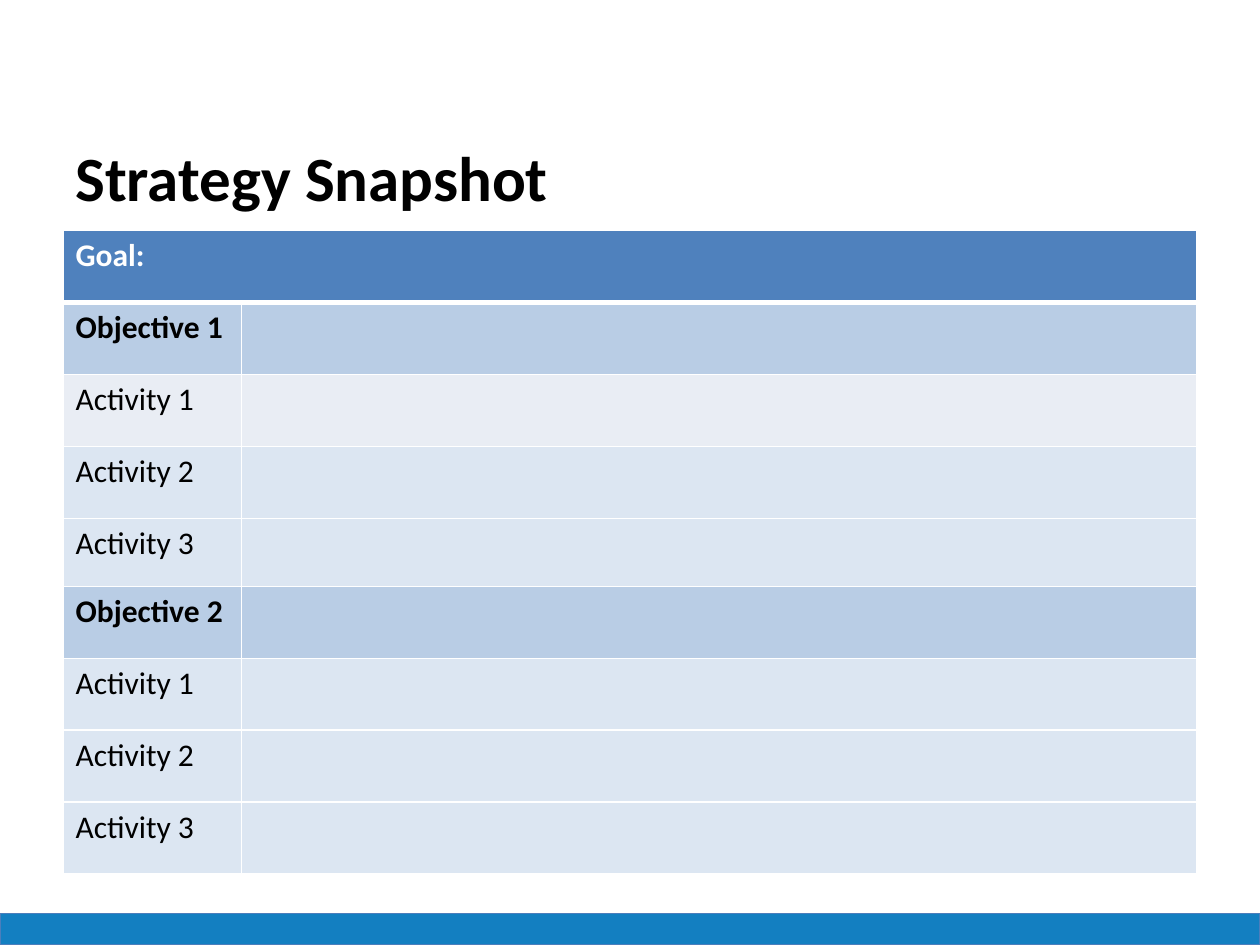
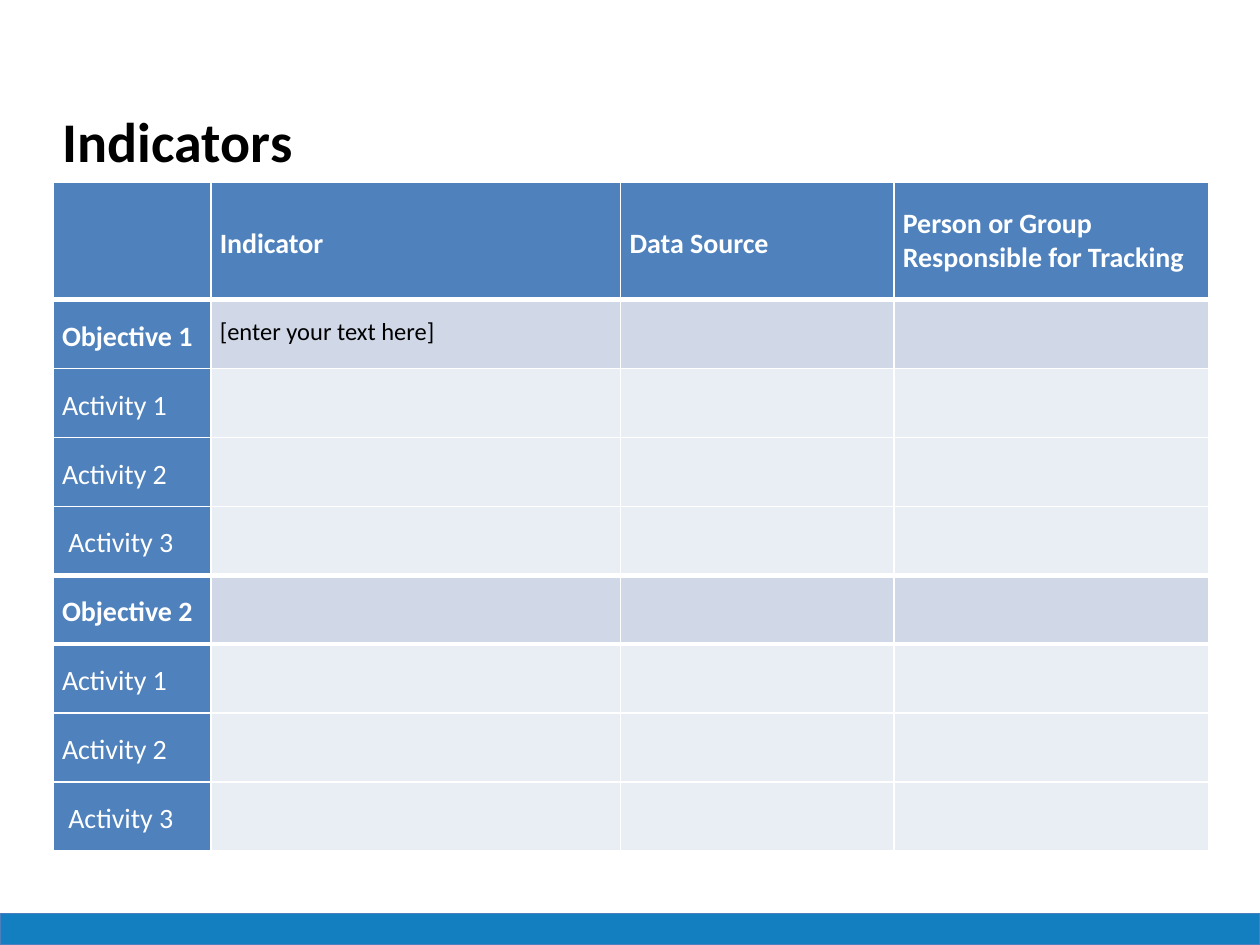
from lxml import etree
from pptx import Presentation
from pptx.dml.color import RGBColor
from pptx.enum.shapes import MSO_SHAPE
from pptx.enum.text import MSO_ANCHOR
from pptx.oxml.ns import qn
from pptx.util import Cm, Pt

FONT = "Calibri"
COLORS = {
    "black": "000000",
    "white": "FFFFFF",
    "band": "137FC1",
    "band_line": "4B7EBC",
    "header": "4F81BD",
    "objective": "B9CDE5",
    "activity": "DCE6F2",
    "pale": "E9EDF4",
    "objective_cell": "D0D8E8",
}
SLIDE_W, SLIDE_H = 25.4, 19.05
BAND_H = 0.64
THIN, THICK = Pt(1), Pt(3)


def rgb(name):
    return RGBColor.from_string(COLORS[name])


def style(p, size, color, bold):
    font = p.font
    font.name, font.size, font.bold = FONT, Pt(size), bold
    font.color.rgb = rgb(color)


# Shared parts: title, bottom band, table grid
def add_title(s, box, text, size):
    tf = s.shapes.add_textbox(*map(Cm, box)).text_frame
    tf.word_wrap = True
    tf.vertical_anchor = MSO_ANCHOR.MIDDLE
    p = tf.paragraphs[0]
    p.text = text
    style(p, size, "black", True)


def add_band(s):
    band = s.shapes.add_shape(MSO_SHAPE.RECTANGLE, 0, Cm(SLIDE_H - BAND_H),
                              Cm(SLIDE_W), Cm(BAND_H))
    band.shadow.inherit = False
    band.fill.solid()
    band.fill.fore_color.rgb = rgb("band")
    band.line.color.rgb = rgb("band_line")
    band.line.width = 0


def new_slide(prs, title_box, title, size):
    s = prs.slides.add_slide(prs.slide_layouts[6])
    add_band(s)
    add_title(s, title_box, title, size)
    return s


def add_borders(cell, top, bottom):
    tcPr = cell._tc.get_or_add_tcPr()
    for side, width in (("L", THIN), ("R", THIN), ("T", top), ("B", bottom)):
        ln = etree.SubElement(tcPr, qn(f"a:ln{side}"), w=str(width))
        fill = etree.SubElement(ln, qn("a:solidFill"))
        etree.SubElement(fill, qn("a:srgbClr"), val=COLORS["white"])


def add_grid(s, left, top, widths, heights, fills, thick_below):
    """Add an empty table; fills holds one list of colour names per row."""
    table = s.shapes.add_table(len(heights), len(widths), Cm(left), Cm(top),
                               Cm(sum(widths)), Cm(sum(heights))).table
    table.first_row = table.horz_banding = False
    for column, width in zip(table.columns, widths):
        column.width = Cm(width)
    for i, height in enumerate(heights):
        table.rows[i].height = Cm(height)
        for cell, fill in zip(table.rows[i].cells, fills[i]):
            add_borders(cell, THICK if i - 1 in thick_below else THIN,
                        THICK if i in thick_below else THIN)
            cell.fill.solid()
            cell.fill.fore_color.rgb = rgb(fill)
    return table


def write(cell, text, size, color, bold):
    p = cell.text_frame.paragraphs[0]
    p.text = text
    style(p, size, color, bold)
    return p


def write_centred(cell, text, size, color, bold, spacing):
    cell.vertical_anchor = MSO_ANCHOR.MIDDLE
    cell.margin_left = cell.margin_right = Cm(0.18)
    cell.margin_top = cell.margin_bottom = 0
    write(cell, text, size, color, bold).line_spacing = spacing


def row_labels(last_activity):
    return [label for n in (1, 2)
            for label in (f"Objective {n}", "Activity 1", "Activity 2", last_activity)]


def is_objective(label):
    return label.startswith("Objective")


# Slide 1: goal, objectives and activities
def snapshot_slide(prs, left, top):
    s = new_slide(prs, (left, 2.67, 22.86, 1.78), "Strategy Snapshot", 36)
    labels = row_labels("Activity 3")
    row_fills = ["header"] + ["objective" if is_objective(label) else "activity"
                              for label in labels]
    row_fills[2] = "pale"
    heights = [1.45] * 9
    heights[4] = 1.37
    table = add_grid(s, left, top, [3.6, 19.26], heights,
                     [[fill] * 2 for fill in row_fills], {0})
    goal = table.cell(0, 0)
    goal.merge(table.cell(0, 1))
    write(goal, "Goal:", 18, "white", True)
    for i, label in enumerate(labels, 1):
        write(table.cell(i, 0), label, 18, "black", is_objective(label))


# Slide 2: indicator tracking table
def indicators_slide(prs, left, top):
    s = new_slide(prs, (1.02, 1.9, 22.86, 1.85), "Indicators", 32)
    labels = row_labels(" Activity 3")
    fills = [["header"] * 4]
    for label in labels:
        fills.append(["header"] + ["objective_cell" if is_objective(label) else "pale"] * 3)
    table = add_grid(s, left, top, [3.18, 8.26, 5.51, 6.35], [2.36] + [1.39] * 8,
                     fills, {0, 4, 5})
    headings = (("Indicator", 1.15), ("Data Source", 1.15),
                ("Person or Group Responsible for Tracking", 1.0))
    for j, (heading, spacing) in enumerate(headings, 1):
        write_centred(table.cell(0, j), heading, 16, "white", True, spacing)
    for i, label in enumerate(labels, 1):
        write_centred(table.cell(i, 0), label, 16, "white", is_objective(label), 1.15)
    write_centred(table.cell(1, 1), "[enter your text here]", 14, "black", False, Pt(15))


def main():
    prs = Presentation()
    prs.slide_width, prs.slide_height = Cm(SLIDE_W), Cm(SLIDE_H)
    snapshot_slide(prs, 1.27, 4.65)
    indicators_slide(prs, 1.07, 3.68)
    prs.save("out.pptx")


if __name__ == "__main__":
    main()
